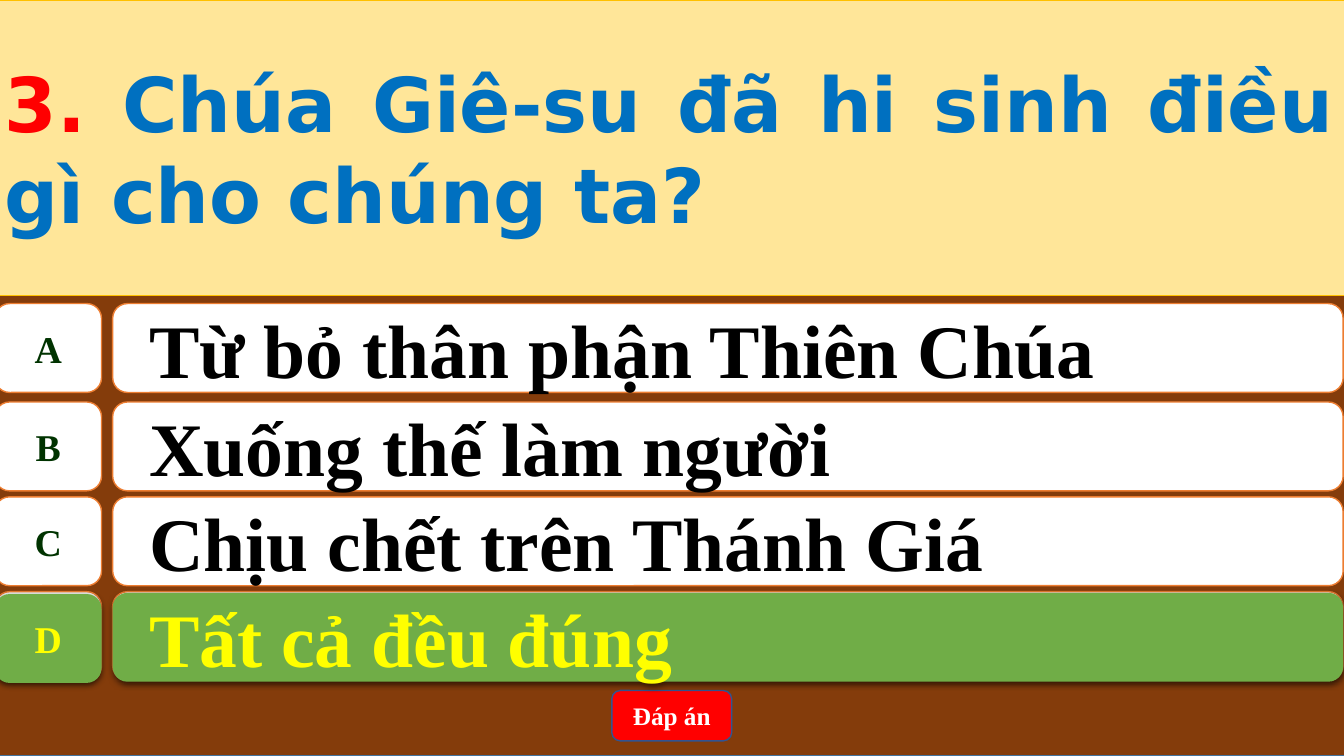
from dataclasses import dataclass

from lxml.etree import SubElement
from pptx import Presentation
from pptx.dml.color import RGBColor
from pptx.enum.shapes import MSO_SHAPE as Shape
from pptx.enum.text import MSO_ANCHOR as Anchor, MSO_AUTO_SIZE as AutoSize, PP_ALIGN as Align
from pptx.oxml.ns import qn
from pptx.util import Cm, Pt

BROWN = RGBColor(0x84, 0x3C, 0x0B)
STEEL = RGBColor(0x43, 0x73, 0x9E)
CREAM = RGBColor(0xFF, 0xE6, 0x99)
GOLD = RGBColor(0xFF, 0xC0, 0x00)
ORANGE = RGBColor(0xED, 0x7D, 0x31)
GREEN = RGBColor(0x70, 0xAD, 0x47)
DARK_GREEN = RGBColor(0x00, 0x33, 0x00)
YELLOW = RGBColor(0xFF, 0xFF, 0x00)
RED = RGBColor(0xFF, 0x00, 0x00)
BLUE = RGBColor(0x00, 0x70, 0xC0)
NAVY = RGBColor(0x32, 0x54, 0x91)
WHITE = RGBColor(0xFF, 0xFF, 0xFF)
BLACK = RGBColor(0x00, 0x00, 0x00)

SERIF = "Times New Roman"
SANS = "DejaVu Sans"
LEFT, FULL_W, SLIDE_H = -0.13, 34.01, 19.05
LETTER_W, ANSWER_X, ANSWER_W, ROW_H = 2.69, 2.84, 31.01, 2.24


@dataclass(frozen=True)
class Box:
    x: float
    y: float
    w: float
    h: float


@dataclass(frozen=True)
class Answer:
    y: float
    letter: str = ""
    text: str = ""
    correct: bool = False
    letter_drop: float = 0


ANSWERS = [
    Answer(7.65, "A", "Từ bỏ thân phận Thiên Chúa"),
    Answer(10.13, "B", "Xuống thế làm người"),
    Answer(12.52, "C", "Chịu chết trên Thánh Giá"),
    Answer(14.91),
    Answer(14.94, "D", "Tất cả đều đúng", True, 0.03),
]


def paint(sp, fill: RGBColor, line: RGBColor | None, width: float = 1) -> None:
    sp.fill.solid()
    sp.fill.fore_color.rgb = fill
    if line is None:
        sp.line.fill.background()
    else:
        sp.line.color.rgb = line
        sp.line.width = Pt(width)


def add_box(shapes, kind: Shape, box: Box, fill: RGBColor, line: RGBColor | None):
    sp = shapes.add_shape(kind, Cm(box.x), Cm(box.y), Cm(box.w), Cm(box.h))
    sp.shadow.inherit = False
    paint(sp, fill, line)
    return sp


def add_shadow(sp) -> None:
    effects = sp._element.spPr.find(qn("a:effectLst"))
    shadow = SubElement(effects, qn("a:outerShdw"), blurRad=str(Pt(4.5)), dist=str(Pt(1.5)),
                        dir="5400000", algn="ctr", rotWithShape="0")
    color = SubElement(shadow, qn("a:srgbClr"), val=str(BLACK))
    SubElement(color, qn("a:alpha"), val="63000")


def add_run(p, text: str, size: float, color: RGBColor, font: str = SERIF) -> None:
    r = p.add_run()
    r.text = text
    r.font.size = Pt(size)
    r.font.name = font
    r.font.bold = True
    r.font.color.rgb = color


def first_paragraph(sp, align: Align, wrap: bool = True):
    tf = sp.text_frame
    tf.word_wrap = wrap
    tf.vertical_anchor = Anchor.MIDDLE
    p = tf.paragraphs[0]
    p.alignment = align
    return p


def add_answer(shapes, answer: Answer) -> None:
    fill, line = (GREEN, None) if answer.correct else (WHITE, ORANGE)
    bar = add_box(shapes, Shape.ROUNDED_RECTANGLE,
                  Box(ANSWER_X, answer.y, ANSWER_W, ROW_H), fill, line)
    tile = add_box(shapes, Shape.FLOWCHART_ALTERNATE_PROCESS,
                   Box(LEFT, answer.y + answer.letter_drop, LETTER_W, ROW_H), fill, line)
    if answer.correct:
        add_shadow(bar)
        add_shadow(tile)
    if answer.text:
        p = first_paragraph(bar, Align.LEFT)
        p.level = 1
        pPr = p._p.get_or_add_pPr()
        pPr.set("marL", str(Cm(1.27)))
        pPr.set("indent", str(Cm(-0.71)))
        add_run(p, answer.text, 54, YELLOW if answer.correct else BLACK)
        p = first_paragraph(tile, Align.CENTER, wrap=False)
        add_run(p, answer.letter, 27, YELLOW if answer.correct else DARK_GREEN)


def add_question(slide) -> None:
    title = slide.shapes.title
    title.left, title.top, title.width, title.height = Cm(LEFT), Cm(0), Cm(FULL_W), Cm(7.44)
    slide.shapes._spTree.append(title._element)
    paint(title, CREAM, GOLD, 0.5)
    title.text_frame.auto_size = AutoSize.NONE
    p = first_paragraph(title, Align.JUSTIFY)
    add_run(p, "3. ", 54, RED, SANS)
    add_run(p, "Chúa Giê-su đã hi sinh điều gì cho chúng ta?", 54, BLUE, SANS)


def main() -> None:
    prs = Presentation()
    prs.slide_width, prs.slide_height = Cm(33.87), Cm(SLIDE_H)
    slide = prs.slides.add_slide(prs.slide_layouts[5])
    shapes = slide.shapes
    add_box(shapes, Shape.RECTANGLE, Box(LEFT, 0, FULL_W, SLIDE_H), BROWN, STEEL)
    add_question(slide)
    button = add_box(shapes, Shape.ROUNDED_RECTANGLE, Box(15.42, 17.4, 3.02, 1.27), RED, NAVY)
    add_run(first_paragraph(button, Align.CENTER), "Đáp án", 18, WHITE)
    for answer in ANSWERS:
        add_answer(shapes, answer)
    prs.save("out.pptx")


if __name__ == "__main__":
    main()
